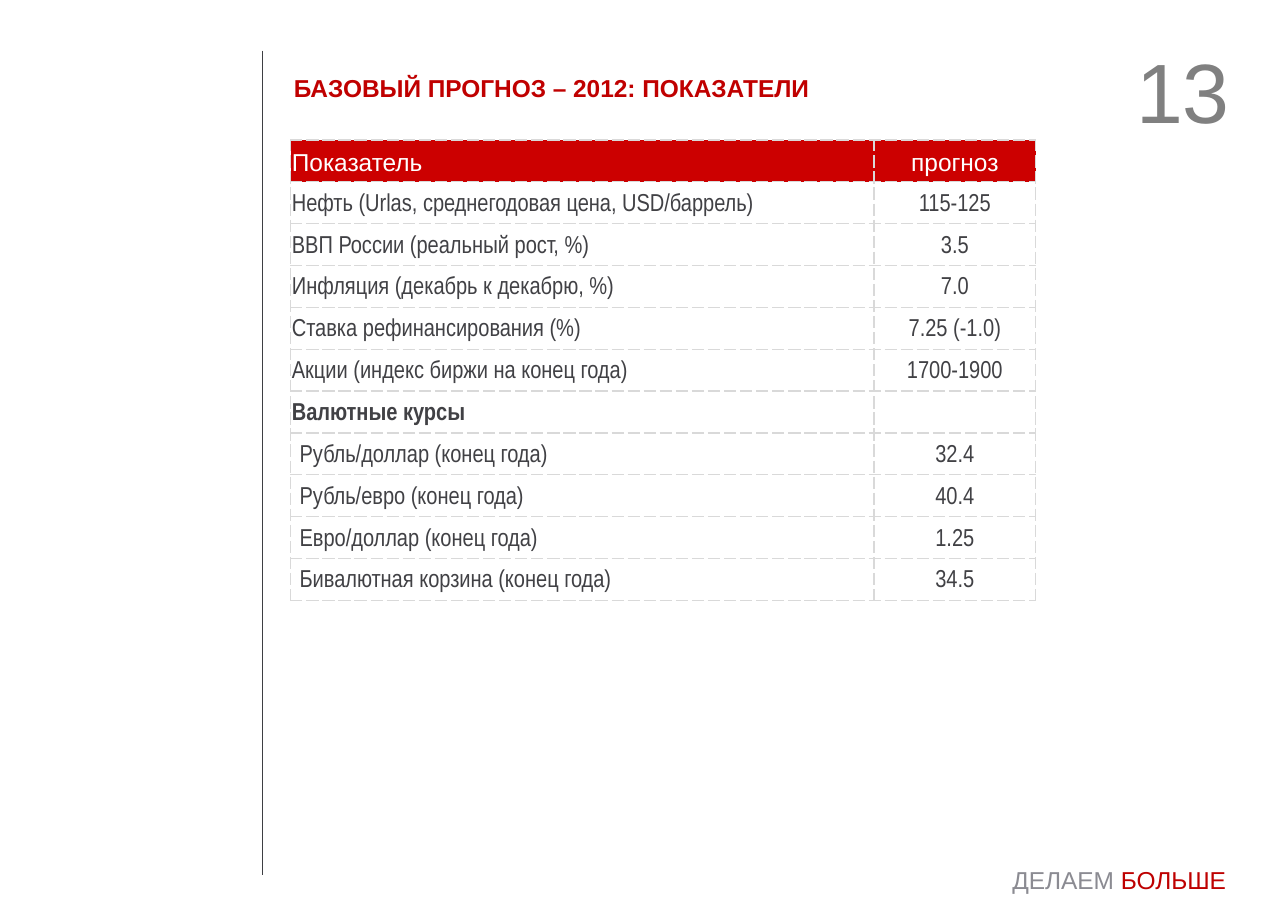
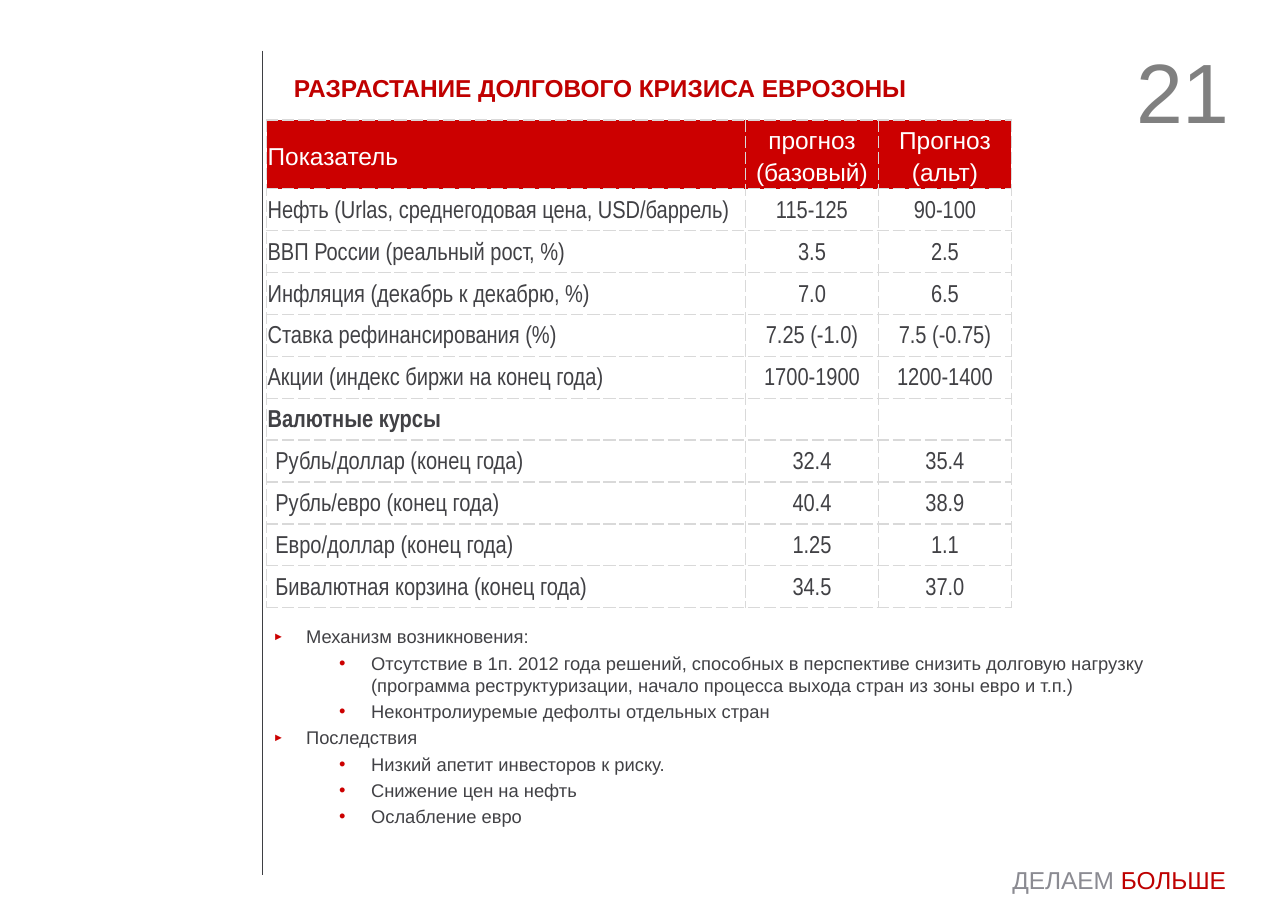
from lxml.etree import SubElement
from pptx import Presentation
from pptx.dml.color import RGBColor
from pptx.enum.shapes import MSO_CONNECTOR
from pptx.enum.text import MSO_ANCHOR, PP_ALIGN
from pptx.oxml import parse_xml
from pptx.oxml.ns import nsdecls, qn
from pptx.util import Inches, Pt

# Colours and fonts
WHITE = RGBColor(0xFF, 0xFF, 0xFF)
RED = RGBColor(0xCC, 0x00, 0x00)
TITLE = RGBColor(0xC0, 0x00, 0x00)
MOTTO = RGBColor(0xBE, 0x00, 0x00)
INK = RGBColor(0x41, 0x41, 0x45)
RULE = RGBColor(0x3E, 0x3F, 0x43)
GREY = RGBColor(0x80, 0x80, 0x80)
PALE = RGBColor(0x8B, 0x8B, 0x92)
DASH = RGBColor(0xD9, 0xD9, 0xD9)
SANS, SLIM = "Arial", "Arial Narrow"

# Grid: 100 columns by 100 rows
WIDE, HIGH = Inches(11.69), Inches(8.27)
PAGE = (0, 0, 100, 100)

LABELS = [
    "Нефть (Urlas, среднегодовая цена, USD/баррель)",
    "ВВП России (реальный рост, %)",
    "Инфляция (декабрь к декабрю, %)",
    "Ставка рефинансирования (%)",
    "Акции (индекс биржи на конец года)",
    "Валютные курсы",
    "Рубль/доллар (конец года)",
    "Рубль/евро (конец года)",
    "Евро/доллар (конец года)",
    "Бивалютная корзина (конец года)",
]
GROUP = LABELS.index("Валютные курсы")
BASE = ["115-125", "3.5", "7.0", "7.25 (-1.0)", "1700-1900", "",
        "32.4", "40.4", "1.25", "34.5"]
OTHER = ["90-100", "2.5", "6.5", "7.5 (-0.75)", "1200-1400", "",
         "35.4", "38.9", "1.1", "37.0"]
POINTS = [
    (0, "Механизм возникновения:"),
    (1, "Отсутствие в 1п. 2012 года решений, способных в перспективе снизить "
        "долговую нагрузку (программа реструктуризации, начало процесса "
        "выхода стран из зоны евро и т.п.)"),
    (1, "Неконтролиуремые дефолты отдельных стран"),
    (0, "Последствия"),
    (1, "Низкий апетит инвесторов к риску."),
    (1, "Снижение цен на нефть"),
    (1, "Ослабление евро"),
]
# Per level: left indent, hanging indent, mark, mark size in percent
MARKS = [(0.3, -0.3, "►", 60), (0.89, -0.29, "•", 100)]


def across(cols):
    return int(WIDE * cols / 100)


def down(rows):
    return int(HIGH * rows / 100)


def place(box, left, top, width, height):
    """Turn percent shares of a box into a box on the grid."""
    x, y, w, h = box
    return (x + w * left / 100, y + h * top / 100,
            w * width / 100, h * height / 100)


def measure(box):
    x, y, w, h = box
    return across(x), down(y), across(w), down(h)


def text(para, words, size=16, color=INK, font=SANS, bold=False,
         align=PP_ALIGN.LEFT, line=None, before=0):
    run = para.add_run()
    run.text = words
    run.font.size, run.font.name, run.font.bold = Pt(size), font, bold
    run.font.color.rgb = color
    para.alignment = align
    para.space_before = Pt(before)
    if line:
        para.line_spacing = line


def panel(slide, box, anchor=MSO_ANCHOR.TOP):
    frame = slide.shapes.add_textbox(*measure(box)).text_frame
    frame.word_wrap = True
    frame.vertical_anchor = anchor
    return frame


def frame_page(slide, box, title, number):
    # Upright rule
    x, y, _, h = place(box, 20.36, 5.56, 0, 90.45)
    rule = slide.shapes.add_connector(
        MSO_CONNECTOR.STRAIGHT, across(x), down(y), across(x), down(y + h))
    rule.line.color.rgb, rule.line.width = RULE, Pt(0.75)
    SubElement(rule._element.spPr, qn("a:effectLst"))
    # Motto
    para = panel(slide, place(box, 77.76, 94.32, 21.81, 4.47)).paragraphs[0]
    text(para, "ДЕЛАЕМ", color=PALE)
    text(para, " БОЛЬШЕ", color=MOTTO)
    # Title
    head = panel(slide, place(box, 21.98, 7.38, 65, 4.47), MSO_ANCHOR.MIDDLE)
    text(head.paragraphs[0], title, color=TITLE, bold=True)
    # Page number
    count = panel(slide, place(box, 79.56, 3.63, 16.85, 9.79))
    count.margin_left = count.margin_right = Inches(0.11)
    count.margin_top = count.margin_bottom = Inches(0.06)
    text(count.paragraphs[0], number, size=55, color=GREY,
         align=PP_ALIGN.RIGHT)


def border(cell):
    props = cell._tc.get_or_add_tcPr()
    for spot, side in enumerate("LRTB"):
        props.insert(spot, parse_xml(
            f'<a:ln{side} {nsdecls("a")} w="{Pt(1)}"><a:solidFill>'
            f'<a:srgbClr val="{DASH}"/></a:solidFill>'
            f'<a:prstDash val="dash"/></a:ln{side}>'))


def fill_cell(cell, words, row, col):
    cell.margin_left = Inches(0.08 if col == 0 and row > GROUP + 1 else 0.01)
    cell.margin_right = cell.margin_top = Inches(0.01)
    cell.margin_bottom = 0
    cell.vertical_anchor = MSO_ANCHOR.MIDDLE
    if row == 0:
        cell.fill.solid()
        cell.fill.fore_color.rgb = RED
    else:
        cell.fill.background()
    border(cell)
    text(cell.text_frame.paragraphs[0], words, line=1.15,
         color=INK if row else WHITE, font=SLIM if row else SANS,
         bold=row == GROUP + 1,
         align=PP_ALIGN.CENTER if col else PP_ALIGN.LEFT)


def forecast(slide, box, shares, top, heads, *series):
    """Draw the table: column shares and header share, in percent."""
    rows = [heads, *zip(LABELS, *series)]
    _, _, width, height = measure(box)
    grid = slide.shapes.add_table(
        len(rows), len(heads), *measure(box)).table
    grid.first_row = grid.horz_banding = False
    for col, share in zip(grid.columns, shares):
        col.width = int(width * share / 100)
    rest = (100 - top) / len(LABELS)
    for r, row in enumerate(rows):
        grid.rows[r].height = int(height * (rest if r else top) / 100)
        for c, words in enumerate(row):
            fill_cell(grid.cell(r, c), words, r, c)


def bullets(slide, box, points):
    frame = panel(slide, box)
    for i, (level, words) in enumerate(points):
        para = frame.add_paragraph() if i else frame.paragraphs[0]
        left, hang, mark, size = MARKS[level]
        para.level = level
        props = para._p.get_or_add_pPr()
        props.set("marL", str(Inches(left)))
        props.set("indent", str(Inches(hang)))
        tint = SubElement(props, qn("a:buClr"))
        SubElement(tint, qn("a:srgbClr"), val=str(RED))
        SubElement(props, qn("a:buSzPct"), val=str(size * 1000))
        SubElement(props, qn("a:buFont"), typeface=SANS)
        SubElement(props, qn("a:buChar"), char=mark)
        text(para, words, size=12, before=2.8 if i else 0)


def main():
    deck = Presentation()
    deck.slide_width, deck.slide_height = WIDE, HIGH
    blank = deck.slide_layouts[6]

    # Base forecast
    slide = deck.slides.add_slide(blank)
    frame_page(slide, PAGE, "БАЗОВЫЙ ПРОГНОЗ – 2012: ПОКАЗАТЕЛИ", "13")
    forecast(slide, place(PAGE, 22.58, 15.36, 57.83, 50.54), (78.3, 21.7),
             9.09, ("Показатель", "прогноз"), BASE)

    # Debt crisis
    slide = deck.slides.add_slide(blank)
    frame_page(slide, PAGE, "РАЗРАСТАНИЕ ДОЛГОВОГО КРИЗИСА ЕВРОЗОНЫ", "21")
    forecast(slide, place(PAGE, 20.7, 13.18, 57.83, 52.9),
             (64.3, 17.85, 17.85), 13.05,
             ("Показатель", "прогноз (базовый)", "Прогноз (альт)"),
             BASE, OTHER)
    bullets(slide, place(PAGE, 20.36, 68.08, 75.28, 31.68), POINTS)

    deck.save("out.pptx")


if __name__ == "__main__":
    main()
